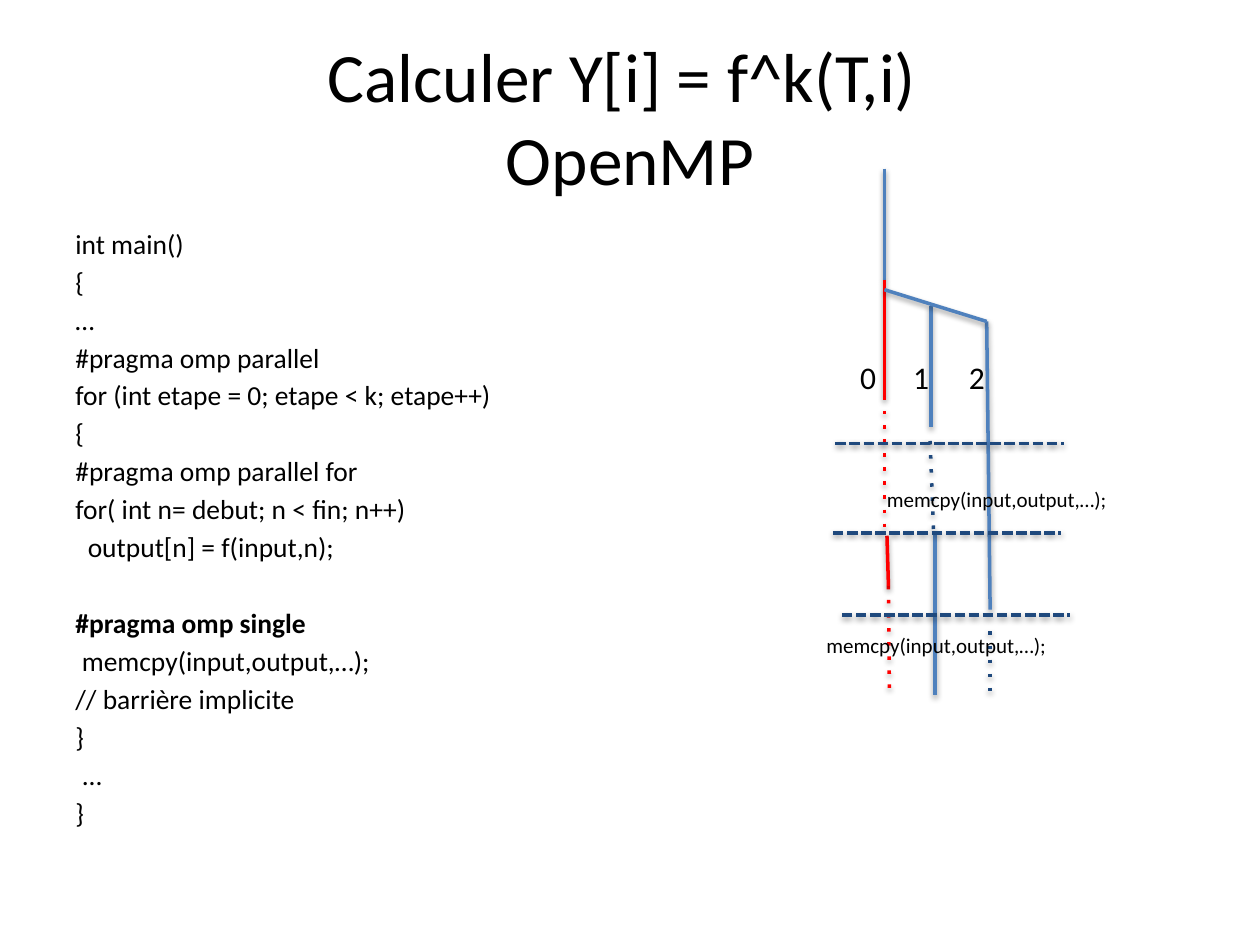
import pptx
import pptx.dml.color
import pptx.enum.shapes
import pptx.enum.text
import pptx.oxml
import pptx.oxml.ns
import pptx.util
from pptx.util import Cm

FONT = "Calibri"
BLACK, BLUE, NAVY, RED = "000000", "4F81BD", "1F497D", "FF0000"
CODE_SIZE, CODE_GAP = 15.7, 2.8
BLANK_LINE = 22  # points left open before the single block

TITLE = "Calculer Y[i] = f^k(T,i) \nOpenMP"

# text, format of the paragraph
CODE = [
    ("int main()", {}),
    ("{", {}),
    ("…", {}),
    ("#pragma omp parallel", {}),
    ("for (int etape = 0; etape < k; etape++)", {}),
    ("{", {}),
    ("#pragma omp parallel for", {}),
    ("for( int n= debut; n < fin; n++)", {}),
    ("output[n] = f(input,n);", {"indent": 0.25}),
    ("#pragma omp single", {"bold": True, "before": BLANK_LINE + CODE_GAP}),
    ("memcpy(input,output,…);", {"indent": 0.13}),
    ("// barrière implicite", {}),
    ("}", {}),
    ("...", {"indent": 0.13}),
    ("}", {}),
]

# Thread segments in cm: start, end, colour, dash
THREADS = [
    ((17.83, 3.40), (17.83, 5.64), BLUE, None),
    ((19.89, 6.48), (19.96, 12.29), BLUE, None),
    ((17.83, 5.64), (17.83, 8.00), RED, None),
    ((18.77, 6.17), (18.77, 8.61), BLUE, None),
    ((17.83, 5.84), (19.89, 6.48), BLUE, None),
    ((17.83, 8.00), (17.83, 10.74), RED, "dot"),
    ((18.85, 10.74), (18.85, 14.02), BLUE, None),
    ((17.91, 11.81), (17.93, 14.02), RED, "dot"),
    ((17.88, 10.80), (17.91, 11.81), RED, None),
    ((18.75, 8.89), (18.82, 10.74), NAVY, "dot"),
    ((19.96, 12.73), (19.96, 14.02), NAVY, "dot"),
]

# Barriers share one width: left, height on the slide
BARRIER_WIDTH = 4.6
BARRIERS = [(16.84, 8.94), (16.79, 10.74), (16.97, 12.40)]

# Thread numbers sit on one row
NUMBER_TOP = 7.09
NUMBER_LEFTS = [17.09, 18.16, 19.28]

COPY_CALL = "memcpy(input,output,…);"
COPY_PLACES = [(17.63, 9.68), (16.41, 12.62)]


def color(hex_string):
    return pptx.dml.color.RGBColor.from_string(hex_string)


def add_box(slide, left, top, width, height, wrap=False, middle=False):
    box = slide.shapes.add_textbox(Cm(left), Cm(top), Cm(width), Cm(height))
    frame = box.text_frame
    frame.word_wrap = wrap
    if middle:
        frame.vertical_anchor = pptx.enum.text.MSO_ANCHOR.MIDDLE
    return frame


def write(paragraph, text, size=18, bold=False, centered=False, before=0, indent=0):
    paragraph.text = text
    paragraph.space_before = pptx.util.Pt(before)
    if centered:
        paragraph.alignment = pptx.enum.text.PP_ALIGN.CENTER
    if indent:
        properties = paragraph._p.get_or_add_pPr()
        properties.set("marL", str(Cm(indent)))
        properties.set("indent", "0")
    for run in paragraph.runs:
        run.font.name = FONT
        run.font.size = pptx.util.Pt(size)
        run.font.bold = bold
        run.font.color.rgb = color(BLACK)


def add_line(slide, start, end, line_color, dash=None):
    line = slide.shapes.add_connector(
        pptx.enum.shapes.MSO_CONNECTOR.STRAIGHT, *map(Cm, start + end))
    line.line.color.rgb = color(line_color)
    line.line.width = pptx.util.Pt(2)
    namespace = pptx.oxml.ns.nsdecls("a")
    if dash:
        line.line._get_or_add_ln().append(
            pptx.oxml.parse_xml(f'<a:prstDash {namespace} val="{dash}"/>'))
    # Soft shadow straight below the line
    line._element.spPr.append(pptx.oxml.parse_xml(
        f'<a:effectLst {namespace}>'
        '<a:outerShdw blurRad="40000" dist="20000" dir="5400000" rotWithShape="0">'
        f'<a:srgbClr val="{BLACK}"><a:alpha val="38000"/></a:srgbClr>'
        '</a:outerShdw></a:effectLst>'))


def main():
    presentation = pptx.Presentation()
    presentation.slide_width, presentation.slide_height = Cm(25.4), Cm(19.05)
    slide = presentation.slides.add_slide(presentation.slide_layouts[6])

    # Title
    title = add_box(slide, 1.27, 0.76, 22.86, 3.18, wrap=True, middle=True)
    write(title.paragraphs[0], TITLE, size=39.6, centered=True)

    # Program
    code = add_box(slide, 1.27, 4.45, 22.86, 12.57, wrap=True)
    for index, (text, style) in enumerate(CODE):
        paragraph = code.add_paragraph() if index else code.paragraphs[0]
        write(paragraph, text, **{"size": CODE_SIZE, "before": CODE_GAP if index else 0, **style})

    # Threads and barriers
    for start, end, line_color, dash in THREADS:
        add_line(slide, start, end, line_color, dash)
    for left, top in BARRIERS:
        add_line(slide, (left, top), (left + BARRIER_WIDTH, top), NAVY, "sysDash")

    # Labels
    for number, left in enumerate(NUMBER_LEFTS):
        write(add_box(slide, left, NUMBER_TOP, 0.84, 1.02).paragraphs[0], str(number))
    for left, top in COPY_PLACES:
        write(add_box(slide, left, top, 4.98, 0.76).paragraphs[0], COPY_CALL, size=12)

    presentation.save("out.pptx")


if __name__ == "__main__":
    main()
